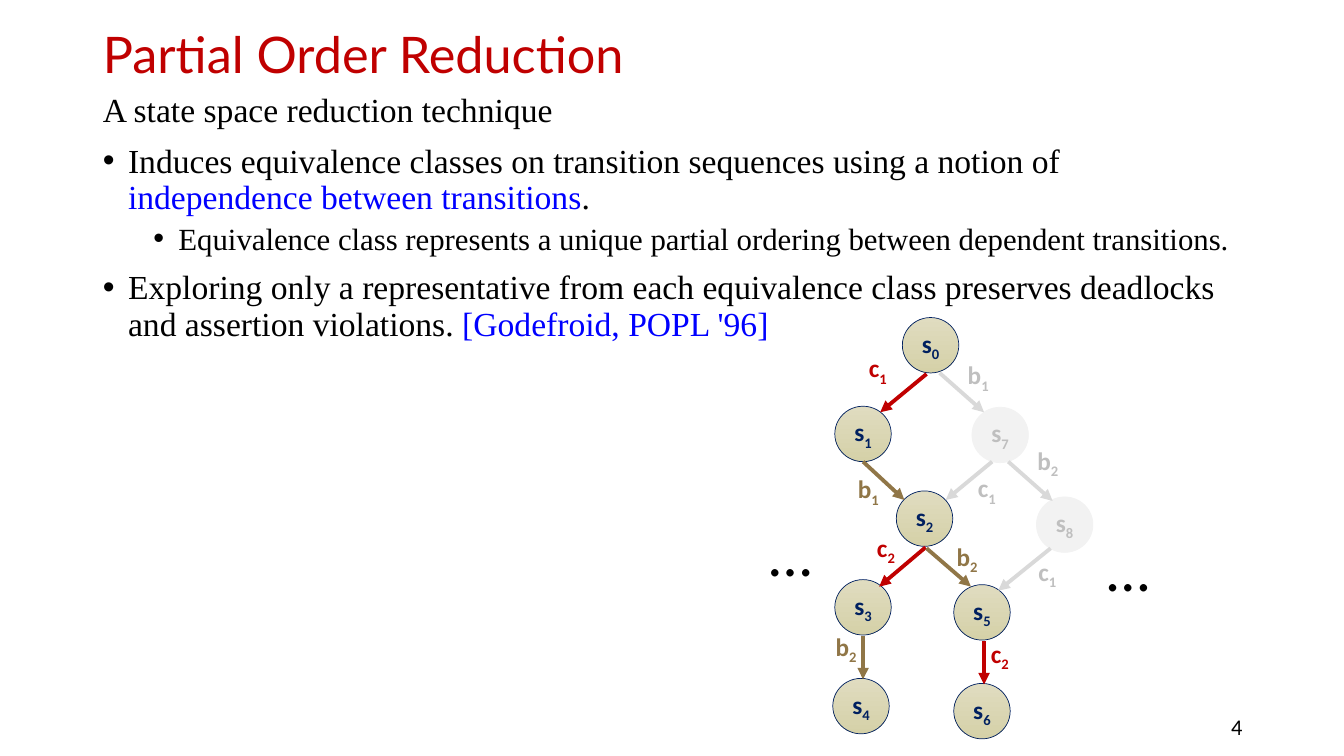
import pptx
import pptx.util
import pptx.dml.color
import pptx.enum.shapes
import pptx.enum.text
import pptx.oxml.ns
import lxml.etree

RGB = pptx.dml.color.RGBColor
Pt = pptx.util.Pt
ALIGN = pptx.enum.text.PP_ALIGN
ANCHOR = pptx.enum.text.MSO_ANCHOR
qn = pptx.oxml.ns.qn

BLACK = RGB(0x00, 0x00, 0x00)
RED = RGB(0xC0, 0x00, 0x00)
BLUE = RGB(0x00, 0x00, 0xFF)
NAVY = RGB(0x00, 0x20, 0x60)
GOLD = RGB(0x90, 0x76, 0x47)
SAND_LIGHT = RGB(0xE0, 0xDC, 0xC0)
SAND_DARK = RGB(0xD5, 0xD1, 0xA8)
PALE_FILL = RGB(0xF2, 0xF2, 0xF2)
PALE_LINE = RGB(0xD9, 0xD9, 0xD9)
PALE_TEXT = RGB(0xBF, 0xBF, 0xBF)

COLUMNS, ROWS = 133.3, 75
NODE_W, NODE_H = 5.6, 5.5
LABEL_W, LABEL_H = 4.3, 4

BULLETS = [
    (0, 24, 10, False, [("A state space reduction technique", BLACK)]),
    (0, 24, 10, True, [
        ("Induces equivalence classes on transition sequences using a notion of ", BLACK),
        ("independence between transitions", BLUE), (".", BLACK)]),
    (1, 22, 5, True, [
        ("Equivalence class represents a unique partial ordering "
         "between dependent transitions.", BLACK)]),
    (0, 24, 10, True, [
        ("Exploring only a representative from each equivalence class "
         "preserves deadlocks and assertion violations. ", BLACK),
        ("[Godefroid, POPL '96]", BLUE)]),
]

STATES = [
    ("0", 89.5, 31.5, True), ("1", 82.8, 40.3, True), ("2", 88.9, 48.7, True),
    ("3", 82.8, 57.5, True), ("4", 82.6, 67.3, True), ("5", 94.6, 58, True),
    ("6", 94.6, 67.8, True), ("7", 96.4, 40.4, False), ("8", 102.8, 49.3, False),
]

TRANSITIONS = [
    ("c1", True, (91.9, 37.1), (87.3, 40.9), (85.2, 34.5)),
    ("b1", False, (93.2, 37), (97.6, 40.9), (95, 35.2)),
    ("b1", True, (85.6, 45.8), (89.7, 49.6), (84.1, 46.5)),
    ("c1", False, (98.4, 45.8), (93.8, 49.6), (96, 46.4)),
    ("b2", False, (100, 45.8), (104.4, 49.7), (101.9, 43.7)),
    ("c2", True, (91.8, 54.3), (87.2, 58.2), (86, 52.3)),
    ("b2", True, (91.9, 54.4), (96.3, 58.2), (93.9, 53.2)),
    ("c1", False, (104.2, 54.4), (99, 58.6), (102, 54.7)),
    ("b2", True, (85.6, 63.1), (85.6, 67.4), (81.9, 62.1)),
    ("c2", True, (97.6, 63.6), (97.6, 67.9), (97.3, 62.8)),
]


class Deck:
    title_font, body_font, graph_font = "Lato", "Times New Roman", "Calibri"

    def __init__(self):
        self.prs = pptx.Presentation()
        self.prs.slide_width = pptx.util.Inches(13.33)
        self.prs.slide_height = pptx.util.Inches(7.5)
        self.s = self.prs.slides.add_slide(self.prs.slide_layouts[1])

    def x(self, columns):
        return round(self.prs.slide_width * columns / COLUMNS)

    def y(self, rows):
        return round(self.prs.slide_height * rows / ROWS)

    def box(self, left, top, width, height):
        return self.x(left), self.y(top), self.x(width), self.y(height)

    def style(self, p, font, size, color, bold=False):
        p.font.name, p.font.size, p.font.bold = font, Pt(size), bold
        p.font.color.rgb = color

    def symbol(self, p, name, color):
        self.style(p, self.graph_font, 18, color, True)
        p.add_run().text = name[0]
        r = p.add_run()
        r.text = name[1:]
        r.font._element.set("baseline", "-25000")

    def place(self, sp, *area):
        sp.left, sp.top, sp.width, sp.height = self.box(*area)
        sp.text_frame.auto_size = pptx.enum.text.MSO_AUTO_SIZE.NONE
        return sp.text_frame

    def title(self, text, *area):
        tf = self.place(self.s.shapes.title, *area)
        tf.vertical_anchor = ANCHOR.MIDDLE
        p = tf.paragraphs[0]
        p.text, p.alignment, p.line_spacing = text, ALIGN.LEFT, 0.9
        self.style(p, self.title_font, 36, RED)

    def body(self, items, *area):
        tf = self.place(self.s.placeholders[1], *area)
        for i, (level, size, before, bulleted, runs) in enumerate(items):
            p = tf.add_paragraph() if i else tf.paragraphs[0]
            p.level, p.line_spacing, p.space_before = level, 0.9, Pt(before)
            self.style(p, self.body_font, size, BLACK)
            self.bullet(p, level, bulleted)
            for text, color in runs:
                r = p.add_run()
                r.text = text
                if color != BLACK:
                    r.font.color.rgb = color

    def bullet(self, p, level, bulleted):
        pPr = p._p.get_or_add_pPr()
        indent = pptx.util.Inches(0.25) if bulleted else 0
        pPr.set("marL", str(indent * (1 + 2 * level)))
        pPr.set("indent", str(-indent))
        if bulleted:
            font, mark = (lxml.etree.Element(qn(t)) for t in ("a:buFont", "a:buChar"))
            font.set("typeface", "Arial")
            mark.set("char", "•")
            marks = [font, mark]
        else:
            marks = [lxml.etree.Element(qn("a:buNone"))]
        for mark in marks:
            pPr.find(qn("a:defRPr")).addprevious(mark)

    def text_box(self, *area):
        tf = self.s.shapes.add_textbox(*self.box(*area)).text_frame
        tf.word_wrap = True
        return tf

    def text(self, text, size, *area, align=ALIGN.LEFT, anchor=ANCHOR.TOP):
        tf = self.text_box(*area)
        tf.vertical_anchor = anchor
        p = tf.paragraphs[0]
        p.text, p.alignment = text, align
        self.style(p, self.graph_font, size, BLACK)

    def label(self, name, color, left, top):
        tf = self.text_box(left, top, LABEL_W, LABEL_H)
        self.symbol(tf.paragraphs[0], name, color)

    def state(self, number, left, top, explored):
        sp = self.s.shapes.add_shape(pptx.enum.shapes.MSO_SHAPE.OVAL,
                                     *self.box(left, top, NODE_W, NODE_H))
        sp.shadow.inherit = False
        sp.line.width = Pt(0.5)
        sp.line.color.rgb = NAVY if explored else PALE_FILL
        if explored:
            sp.fill.gradient()
            sp.fill.gradient_angle = 270
            for stop, color in zip(sp.fill.gradient_stops, (SAND_LIGHT, SAND_DARK)):
                stop.color.rgb = color
        else:
            sp.fill.solid()
            sp.fill.fore_color.rgb = PALE_FILL
        tf = sp.text_frame
        tf.margin_left = tf.margin_right = tf.margin_top = tf.margin_bottom = 0
        tf.word_wrap, tf.vertical_anchor = False, ANCHOR.MIDDLE
        p = tf.paragraphs[0]
        p.alignment = ALIGN.CENTER
        self.symbol(p, "s" + number, NAVY if explored else PALE_TEXT)

    def arrow(self, color, start, end):
        c = self.s.shapes.add_connector(
            pptx.enum.shapes.MSO_CONNECTOR.STRAIGHT,
            self.x(start[0]), self.y(start[1]), self.x(end[0]), self.y(end[1]))
        c.line.color.rgb, c.line.width = color, Pt(2.75)
        ln = c.line._get_or_add_ln()
        lxml.etree.SubElement(ln, qn("a:tailEnd")).set("type", "triangle")
        lxml.etree.SubElement(c._element.spPr, qn("a:effectLst"))

    def transition(self, name, explored, start, end, label_at):
        color = RED if name[0] == "c" else GOLD
        self.arrow(color if explored else PALE_LINE, start, end)
        self.label(name, color if explored else PALE_TEXT, *label_at)


def main():
    deck = Deck()
    deck.title("Partial Order Reduction", 9.2, 0.5, 115, 10.4)
    deck.body(BULLETS, 9.2, 8.8, 115, 57.6)
    for state in STATES:
        deck.state(*state)
    for transition in TRANSITIONS:
        deck.transition(*transition)
    for left, top in ((75.3, 50.6), (108.8, 52.1)):
        deck.text("…", 44, left, top, 6.6, 8.4)
    deck.text("4", 16, 94.2, 70.7, 30, 2.8, align=ALIGN.RIGHT, anchor=ANCHOR.MIDDLE)
    deck.prs.save("out.pptx")


if __name__ == "__main__":
    main()
